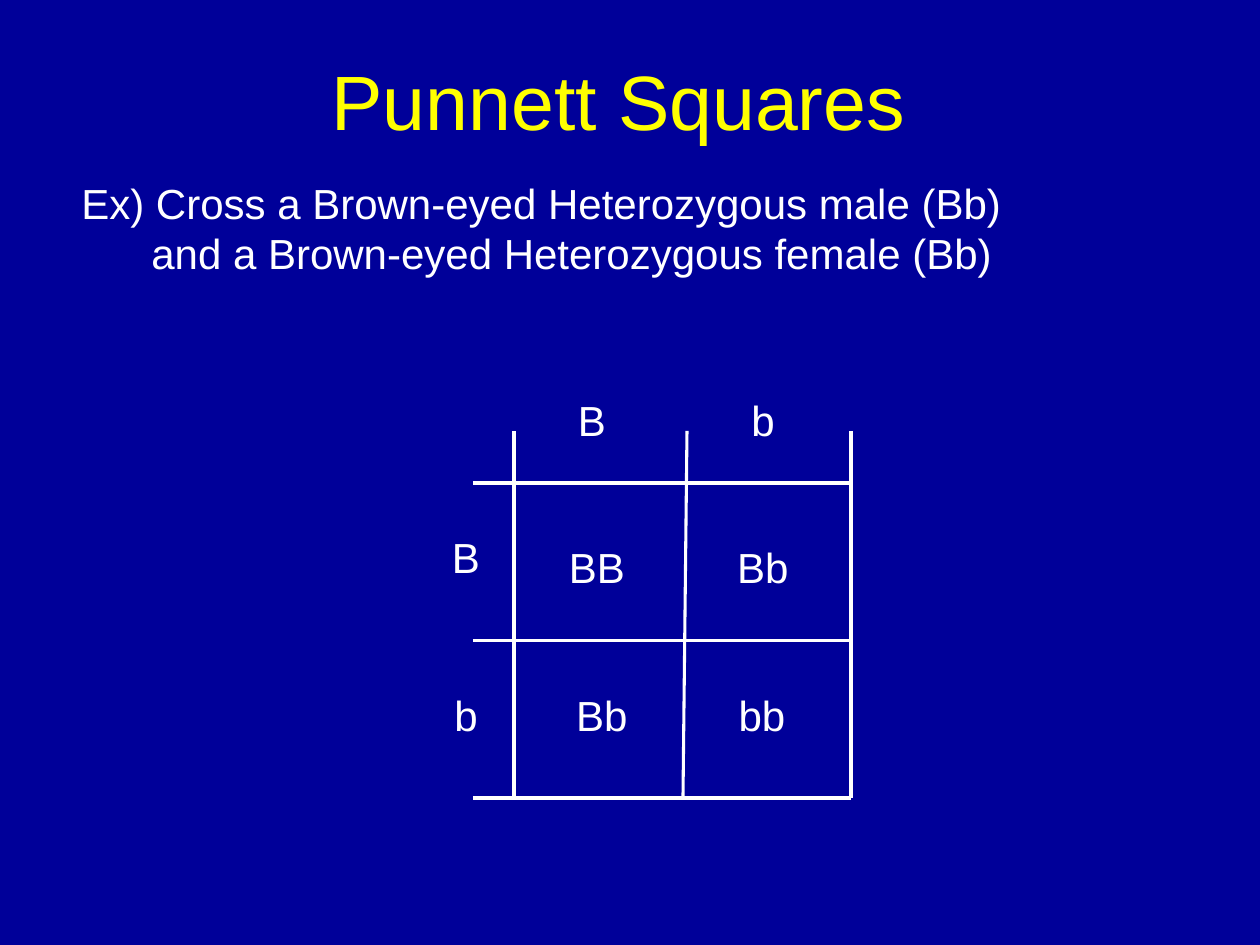
import pptx
import pptx.util
import pptx.dml.color
import pptx.enum.shapes
import pptx.enum.text
import pptx.oxml.ns
import lxml.etree

PX = 914400 / 126
FONT = "Arial"
COLORS = {"back": "000099", "title": "FFFF00", "ink": "FFFFFF"}
ALIGN = pptx.enum.text.PP_ALIGN
ANCHOR = pptx.enum.text.MSO_ANCHOR


def emu(px):
    return pptx.util.Emu(round(px * PX))


def rgb(name):
    return pptx.dml.color.RGBColor.from_string(COLORS[name])


def add_text(slide, box, lines, size=24, color="ink", wrap=True,
             align=ALIGN.LEFT, anchor=ANCHOR.TOP):
    """Add a text box; lines holds pairs of text and left indent."""
    shape = slide.shapes.add_textbox(*map(emu, box))
    frame = shape.text_frame
    frame.word_wrap = wrap
    frame.vertical_anchor = anchor
    for i, (text, indent) in enumerate(lines):
        para = frame.add_paragraph() if i else frame.paragraphs[0]
        para.alignment = align
        if indent:
            para._p.get_or_add_pPr().set("marL", str(emu(indent)))
        run = para.add_run()
        run.text = text
        run.font.name = FONT
        run.font.size = pptx.util.Pt(size)
        run.font.color.rgb = rgb(color)


def add_line(group, x1, y1, x2, y2):
    kind = pptx.enum.shapes.MSO_CONNECTOR.STRAIGHT
    line = group.shapes.add_connector(kind, *map(emu, (x1, y1, x2, y2)))
    line.line.color.rgb = rgb("ink")
    line.line.width = pptx.util.Pt(1.75)
    lxml.etree.SubElement(line._element.spPr,
                          pptx.oxml.ns.qn("a:effectLst"))


def add_grid(slide):
    group = slide.shapes.add_group_shape()
    # Uprights: the middle one leans a little
    for low, high in ((514, 514), (683, 687), (851, 851)):
        add_line(group, low, 798, high, 431)
    # Rows at equal gaps
    for row in range(3):
        y = 483 + row * 315 / 2
        add_line(group, 473, y, 851, y)


def add_allele(slide, text, mid, top):
    """Add a label centred on mid, as wide as its letters need."""
    wide = 25 + sum(28 if letter == "B" else 24 for letter in text)
    add_text(slide, (mid - wide / 2, top, wide, 63), [(text, 0)],
             wrap=False, align=ALIGN.CENTER)


def main():
    deck = pptx.Presentation()
    deck.slide_width, deck.slide_height = emu(1260), emu(945)
    slide = deck.slides.add_slide(deck.slide_layouts[6])
    slide.background.fill.solid()
    slide.background.fill.fore_color.rgb = rgb("back")

    # Title and example
    add_text(slide, (94, 21, 1071, 158), [("Punnett Squares ", 0)], 44,
             "title", align=ALIGN.CENTER, anchor=ANCHOR.MIDDLE)
    add_text(slide, (69, 171, 1159, 113), [
        ("Ex) Cross a Brown-eyed Heterozygous male (Bb)", 0),
        ("and a Brown-eyed Heterozygous female (Bb)", 70)])

    # Punnett square: parents, then offspring
    add_grid(slide)
    for text, mid, top in (
            ("B", 592, 388), ("b", 763, 388),
            ("B", 466, 525), ("b", 466, 683),
            ("BB", 597, 535), ("Bb", 763, 535),
            ("Bb", 602, 683), ("bb", 762, 683)):
        add_allele(slide, text, mid, top)

    deck.save("out.pptx")


if __name__ == "__main__":
    main()
